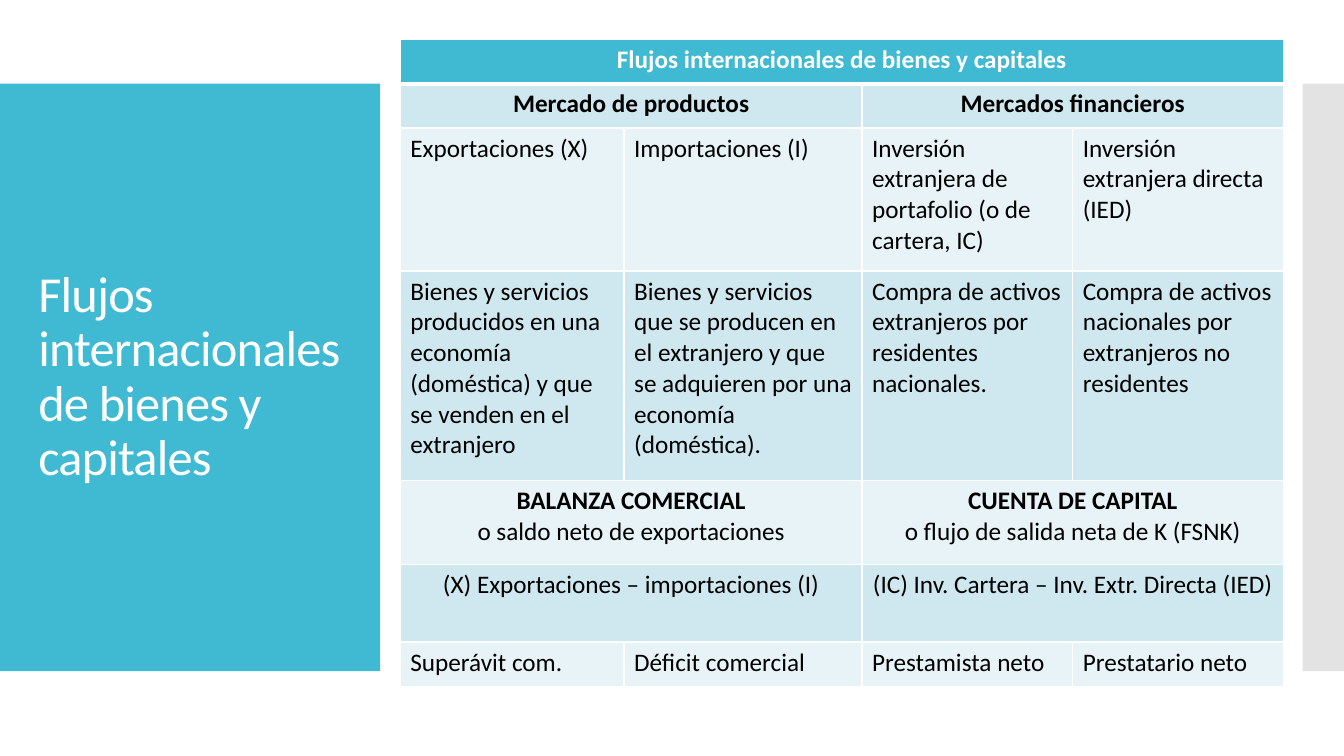
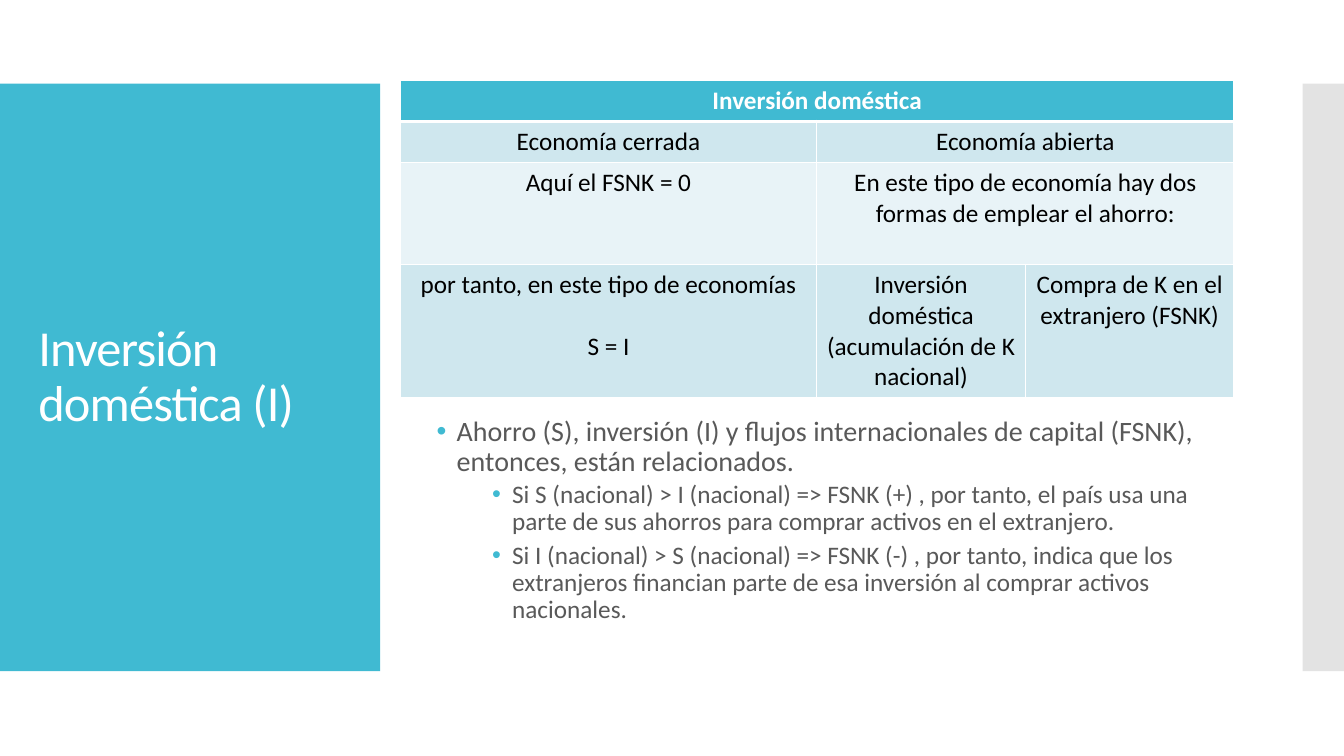
from dataclasses import dataclass
from typing import Any

from lxml.etree import SubElement
from pptx import Presentation
from pptx.dml.color import RGBColor as RGB
from pptx.enum.shapes import MSO_SHAPE as SHAPE
from pptx.enum.text import MSO_ANCHOR as ANCHOR, MSO_AUTO_SIZE as AUTOSIZE, PP_ALIGN as ALIGN
from pptx.oxml.ns import qn
from pptx.util import Inches, Pt

# Shared style
FONT = "Calibri"
TEAL, GREY, WHITE, BLACK, BODY = "40BAD2", "C8C8C8", "FFFFFF", "000000", "595959"
BANDS = ("E8F3F7", "CFE7EE")
TITLE_FMT = {"name": FONT, "size": Pt(36), "bold": False}
CELL_FMT = {"name": FONT, "size": Pt(18)}
TITLE_ONLY, TITLE_AND_BODY = 5, 1


@dataclass(frozen=True)
class Panel:
    left: float
    width: float
    color: str
    alpha: int = 100
    top: float = 0.83
    height: float = 5.83


@dataclass(frozen=True)
class Cell:
    lines: tuple[str, ...]
    span: int = 1
    bold_lines: int = 0
    centered: bool = True
    gap: int = 0  # points before each line after the first


@dataclass(frozen=True)
class Grid:
    left: float
    top: float
    cols: tuple[float, ...]
    heights: tuple[float, ...]
    rows: tuple[tuple[Cell, ...], ...]


@dataclass(frozen=True)
class Bullet:
    text: str
    level: int
    size: int
    indent: float
    before: float
    after: float


PANELS = (Panel(0, 3.77, TEAL), Panel(12.92, 0.42, GREY, alpha=50))


def wide(text: str, *more: str, bold: int = 0) -> Cell:
    """A centred cell across two columns."""
    return Cell((text, *more), span=2, bold_lines=bold)


def plain(*texts: str) -> tuple[Cell, ...]:
    """A row of left-aligned single cells."""
    return tuple(Cell((text,), centered=False) for text in texts)


FLOWS = Grid(
    3.97, 0.39, (2.22, 2.36, 2.09, 2.09), (0.44, 0.44, 1.42, 2.08, 0.83, 0.77, 0.44),
    (
        (Cell(("Flujos internacionales de bienes y capitales",), span=4, bold_lines=1),),
        (wide("Mercado de productos", bold=1), wide("Mercados financieros", bold=1)),
        plain("Exportaciones (X)", "Importaciones (I)",
              "Inversión extranjera de portafolio (o de cartera, IC)",
              "Inversión extranjera directa (IED)"),
        plain("Bienes y servicios producidos en una economía (doméstica) "
              "y que se venden en el extranjero",
              "Bienes y servicios que se producen en el extranjero "
              "y que se adquieren por una economía (doméstica).",
              "Compra de activos extranjeros por residentes nacionales.",
              "Compra de activos nacionales por extranjeros no residentes"),
        (wide("BALANZA COMERCIAL", "o saldo neto de exportaciones", bold=1),
         wide("CUENTA DE CAPITAL", "o flujo de salida neta de K (FSNK)", bold=1)),
        (wide("(X) Exportaciones – importaciones (I)"),
         wide("(IC) Inv. Cartera – Inv. Extr. Directa (IED)")),
        plain("Superávit com.", "Déficit comercial", "Prestamista neto", "Prestatario neto"),
    ),
)

INVESTMENT = Grid(
    3.97, 0.8, (4.13, 2.07, 2.07), (0.4, 0.41, 1.01, 1.32),
    (
        (Cell(("Inversión doméstica",), span=3, bold_lines=1),),
        (Cell(("Economía cerrada",)), wide("Economía abierta")),
        (Cell(("Aquí el FSNK = 0",)),
         wide("En este tipo de economía hay dos formas de emplear el ahorro:")),
        (Cell(("por tanto, en este tipo de economías", "S = I"), gap=22),
         Cell(("Inversión doméstica (acumulación de K nacional)",)),
         Cell(("Compra de K en el extranjero (FSNK)",))),
    ),
)

BULLETS = (
    Bullet("Ahorro (S), inversión (I) y flujos internacionales de capital (FSNK), "
           "entonces, están relacionados.", 0, 20, 0.2, 0, 0),
    Bullet("Si S (nacional) > I (nacional) => FSNK (+) , por tanto, el país usa una parte "
           "de sus ahorros para comprar activos en el extranjero.", 1, 18, 0.75, 2.5, 2.5),
    Bullet("Si I (nacional) > S (nacional) => FSNK (-) , por tanto, indica que los extranjeros "
           "financian parte de esa inversión al comprar activos nacionales.",
           1, 18, 0.75, 2.5, 2.5),
)


def rgb(color: str) -> RGB:
    return RGB.from_string(color)


def paint(fill: Any, color: str) -> None:
    fill.solid()
    fill.fore_color.rgb = rgb(color)


def apply(target: Any, values: dict[str, Any]) -> None:
    for name, value in values.items():
        setattr(target, name, value)


def add_run(p: Any, text: str, color: str, fmt: dict[str, Any]) -> Any:
    r = p.add_run()
    r.text = text
    apply(r.font, fmt)
    r.font.color.rgb = rgb(color)
    return r


def place(sp: Any, left: float, top: float, width: float, height: float) -> None:
    apply(sp, {"left": Inches(left), "top": Inches(top),
               "width": Inches(width), "height": Inches(height)})


def add_panels(prs: Any, s: Any) -> None:
    """Draw the side panels and move them behind everything on the master."""
    for panel in PANELS:
        sp = s.shapes.add_shape(SHAPE.RECTANGLE, Inches(panel.left), Inches(panel.top),
                                Inches(panel.width), Inches(panel.height))
        sp.shadow.inherit = False
        sp.line.fill.background()
        paint(sp.fill, panel.color)
        if panel.alpha < 100:
            clr = sp._element.spPr.find(qn("a:solidFill"))[0]
            SubElement(clr, qn("a:alpha")).set("val", str(panel.alpha * 1000))
        prs.slide_master.shapes._spTree.insert(2, sp._element)


def set_title(s: Any, text: str, width: float) -> None:
    sp = s.shapes.title
    place(sp, 0.28, 1.23, width, 5.03)
    tf = sp.text_frame
    apply(tf, {"word_wrap": True, "auto_size": AUTOSIZE.NONE, "vertical_anchor": ANCHOR.MIDDLE})
    p = tf.paragraphs[0]
    apply(p, {"alignment": ALIGN.LEFT, "line_spacing": 0.9})
    r = add_run(p, text, WHITE, TITLE_FMT)
    r.font._element.set("spc", "-60")


def set_borders(cell: Any, row: int) -> None:
    """White cell borders, with a thicker rule under the header row."""
    tc_pr = cell._tc.get_or_add_tcPr()
    for i, side in enumerate("LRTB"):
        thick = (row, side) in ((0, "B"), (1, "T"))
        ln = SubElement(tc_pr, qn(f"a:ln{side}"), w=str(Pt(3 if thick else 1)))
        fill = SubElement(ln, qn("a:solidFill"))
        SubElement(fill, qn("a:srgbClr"), val=WHITE)
        tc_pr.insert(i, ln)


def fill_cell(cell: Any, content: Cell, color: str) -> None:
    tf = cell.text_frame
    for i, line in enumerate(content.lines):
        p = tf.add_paragraph() if i else tf.paragraphs[0]
        p.alignment = ALIGN.CENTER if content.centered else ALIGN.LEFT
        if i and content.gap:
            p.space_before = Pt(content.gap)
        add_run(p, line, color, CELL_FMT | {"bold": i < content.bold_lines})


def add_grid(s: Any, grid: Grid) -> None:
    table = s.shapes.add_table(
        len(grid.heights), len(grid.cols), Inches(grid.left), Inches(grid.top),
        Inches(sum(grid.cols)), Inches(sum(grid.heights))).table
    for col, width in zip(table.columns, grid.cols):
        col.width = Inches(width)
    for i, (height, contents) in enumerate(zip(grid.heights, grid.rows)):
        table.rows[i].height = Inches(height)
        for cell in table.rows[i].cells:
            paint(cell.fill, BANDS[i % 2] if i else TEAL)
            set_borders(cell, i)
        j = 0
        for content in contents:
            cell = table.cell(i, j)
            if content.span > 1:
                cell.merge(table.cell(i, j + content.span - 1))
            fill_cell(cell, content, BLACK if i else WHITE)
            j += content.span


def set_bullets(s: Any, bullets: tuple[Bullet, ...]) -> None:
    sp = s.placeholders[1]
    place(sp, 4.23, 4.09, 8, 2.45)
    tf = sp.text_frame
    apply(tf, {"word_wrap": True, "auto_size": AUTOSIZE.NONE, "vertical_anchor": ANCHOR.TOP})
    for i, b in enumerate(bullets):
        p = tf.add_paragraph() if i else tf.paragraphs[0]
        apply(p, {"level": b.level, "line_spacing": 0.9,
                  "space_before": Pt(b.before), "space_after": Pt(b.after)})
        add_run(p, b.text, BODY, {"name": FONT, "size": Pt(b.size)})
        p_pr = p._p.get_or_add_pPr()
        p_pr.set("marL", str(Inches(b.indent)))
        p_pr.set("indent", str(Inches(-0.2)))
        SubElement(SubElement(p_pr, qn("a:buClr")), qn("a:srgbClr"), val=TEAL)
        SubElement(p_pr, qn("a:buFont"), typeface="Arial")
        SubElement(p_pr, qn("a:buChar"), char="•")


def main() -> None:
    prs = Presentation()
    apply(prs, {"slide_width": Inches(13.33), "slide_height": Inches(7.5)})

    # International flows
    s = prs.slides.add_slide(prs.slide_layouts[TITLE_ONLY])
    add_panels(prs, s)
    set_title(s, "Flujos internacionales de bienes y capitales", 3.38)
    add_grid(s, FLOWS)

    # Domestic investment
    s = prs.slides.add_slide(prs.slide_layouts[TITLE_AND_BODY])
    set_title(s, "Inversión doméstica (I)", 3.22)
    set_bullets(s, BULLETS)
    add_grid(s, INVESTMENT)

    prs.save("out.pptx")


if __name__ == "__main__":
    main()
